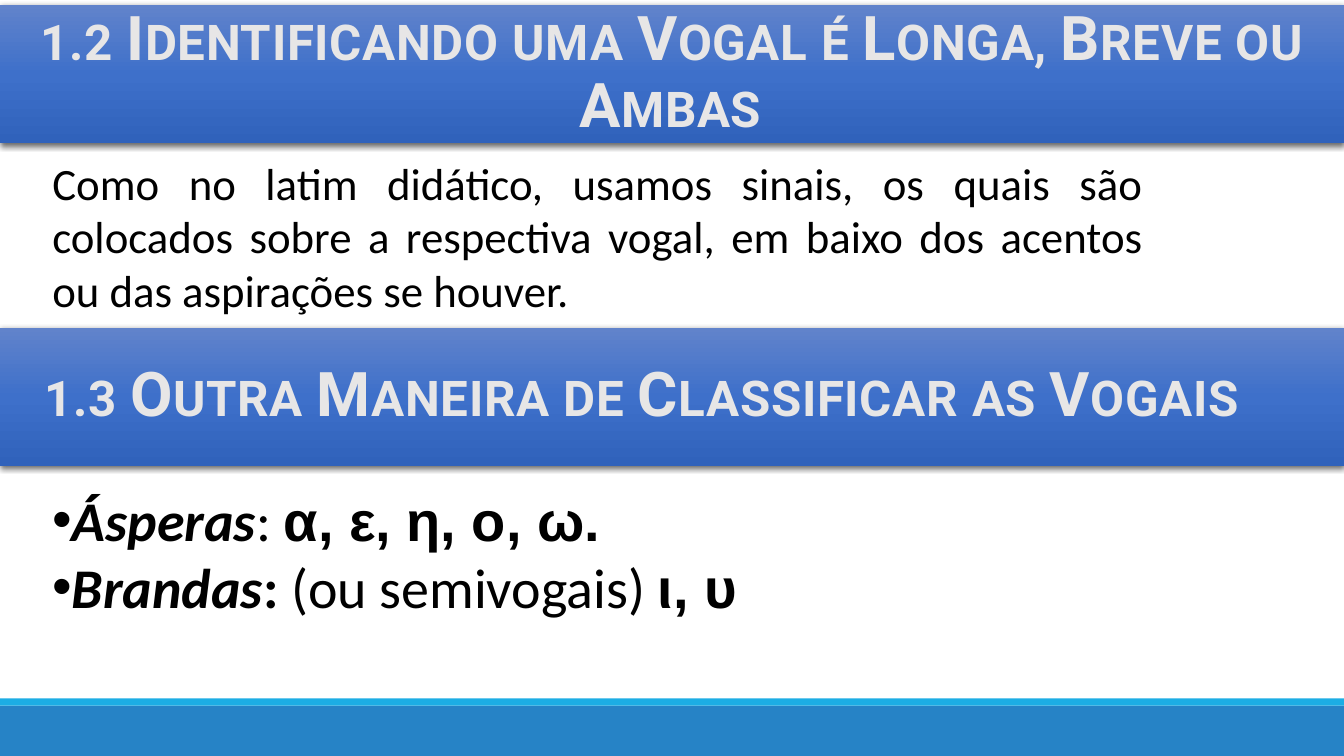
from dataclasses import dataclass

from lxml import etree
from pptx import Presentation
from pptx.dml.color import RGBColor
from pptx.enum.shapes import MSO_SHAPE
from pptx.enum.text import MSO_ANCHOR, MSO_AUTO_SIZE, PP_ALIGN
from pptx.oxml.ns import qn
from pptx.util import Inches, Pt

RECTANGLE = MSO_SHAPE.RECTANGLE
MIDDLE = MSO_ANCHOR.MIDDLE
NO_FIT = MSO_AUTO_SIZE.NONE
CENTER, JUSTIFY = PP_ALIGN.CENTER, PP_ALIGN.JUSTIFY
SLIDE_WIDTH, SLIDE_HEIGHT = 13.33, 7.5


@dataclass(frozen=True)
class Theme:
    heading_font: str = "Roboto"
    body_font: str = "Calibri"
    greek_font: str = "Arial"
    heading_size: int = 44
    body_size: int = 32
    vowel_size: int = 40
    heading_color: str = "E7E6E6"
    body_color: str = "000000"
    band_stops: tuple = ((0, "6183CB"), (50, "3E70CA"), (100, "3062BB"))
    shadow_color: str = "000000"
    footer_color: str = "2683C6"
    stripe_color: str = "1CADE4"


THEME = Theme()


def place(shape, box):
    shape.left, shape.top, shape.width, shape.height = map(Inches, box)


def set_font(font, name, size, color):
    font.name = name
    font.size = Pt(size)
    font.color.rgb = RGBColor.from_string(color)


def add_xml_color(parent, color):
    return etree.SubElement(parent, qn("a:srgbClr"), val=color)


def fill_band(band):
    band.fill.gradient()
    band.fill.gradient_angle = 270
    band.line.fill.background()
    stops = next(band._element.iter(qn("a:gsLst")))
    for old_stop in list(stops):
        stops.remove(old_stop)
    for position, color in THEME.band_stops:
        stop = etree.SubElement(stops, qn("a:gs"), pos=str(position * 1000))
        add_xml_color(stop, color)


def cast_shadow(band):
    band.shadow.inherit = False
    effects = next(band._element.iter(qn("a:effectLst")))
    shadow = etree.SubElement(
        effects, qn("a:outerShdw"), blurRad=str(Pt(4.5)), dist=str(Pt(1.5)),
        dir="5400000", algn="ctr", rotWithShape="0")
    color = add_xml_color(shadow, THEME.shadow_color)
    etree.SubElement(color, qn("a:alpha"), val="63000")


def format_heading(band, box, text, right_inset=0.1):
    place(band, box)
    fill_band(band)
    cast_shadow(band)
    frame = band.text_frame
    frame.text = text
    frame.word_wrap = True
    frame.auto_size = NO_FIT
    frame.vertical_anchor = MIDDLE
    frame.margin_right = Inches(right_inset)
    heading = frame.paragraphs[0]
    heading.alignment = CENTER
    heading.line_spacing = 0.9
    set_font(heading.font, THEME.heading_font, THEME.heading_size, THEME.heading_color)
    heading.font.bold = True
    letters = next(band._element.iter(qn("a:defRPr")))
    letters.set("cap", "small")
    letters.set("spc", "50")


def add_body_frame(slide, box):
    frame = slide.shapes.add_textbox(*map(Inches, box)).text_frame
    frame.word_wrap = True
    frame.vertical_anchor = MIDDLE
    return frame


def add_explanation(slide, box, text):
    explanation = add_body_frame(slide, box).paragraphs[0]
    explanation.text = text
    explanation.alignment = JUSTIFY
    set_font(explanation.font, THEME.body_font, THEME.body_size, THEME.body_color)


def add_vowel_classes(slide, box, classes):
    frame = add_body_frame(slide, box)
    for index, pieces in enumerate(classes):
        vowel_class = frame.add_paragraph() if index else frame.paragraphs[0]
        vowel_class.alignment = JUSTIFY
        properties = vowel_class._p.get_or_add_pPr()
        properties.set("marL", "0")
        properties.set("indent", "0")
        etree.SubElement(properties, qn("a:buFont"), typeface=THEME.greek_font)
        etree.SubElement(properties, qn("a:buChar"), char="•")
        for text, font_name, bold, italic in pieces:
            run = vowel_class.add_run()
            run.text = text
            set_font(run.font, font_name, THEME.vowel_size, THEME.body_color)
            run.font.bold = bold
            run.font.italic = italic


def add_footer(slide, box):
    left, top, width, height = box
    stripe_height = 0.07
    bars = (
        ((left, top + stripe_height, width, height - stripe_height), THEME.footer_color),
        ((left, top, width, stripe_height), THEME.stripe_color),
    )
    for bar_box, color in bars:
        bar = slide.shapes.add_shape(RECTANGLE, *map(Inches, bar_box))
        bar.shadow.inherit = False
        bar.fill.solid()
        bar.fill.fore_color.rgb = RGBColor.from_string(color)
        bar.line.fill.background()


def build_vowel_slide(presentation):
    slide = presentation.slides.add_slide(presentation.slide_layouts[5])
    add_footer(slide, (0, 6.93, SLIDE_WIDTH, 0.57))
    format_heading(
        slide.shapes.title, (0, 0.05, SLIDE_WIDTH, 1.37),
        "1.2 Identificando uma Vogal é Longa, Breve ou Ambas")
    add_explanation(
        slide, (0.42, 1.48, 11.02, 1.72),
        "Como no latim didático, usamos sinais, os quais são colocados sobre a "
        "respectiva vogal, em baixo dos acentos ou das aspirações se houver.")
    body, greek = THEME.body_font, THEME.greek_font
    add_vowel_classes(slide, (0.42, 4.76, 11.04, 1.45), (
        (("Ásperas", body, True, True), (": ", body, False, False),
         ("α, ε, η, ο, ω.", greek, True, False)),
        (("Brandas", body, True, True), (": ", body, True, False),
         ("(ou semivogais) ", body, False, False), ("ι, υ", greek, True, False)),
    ))
    section_box = (0, 3.25, SLIDE_WIDTH, 1.37)
    section_band = slide.shapes.add_shape(RECTANGLE, *map(Inches, section_box))
    format_heading(
        section_band, section_box,
        "1.3 Outra Maneira de Classificar as Vogais", right_inset=0.4)


def main():
    presentation = Presentation()
    presentation.slide_width = Inches(SLIDE_WIDTH)
    presentation.slide_height = Inches(SLIDE_HEIGHT)
    build_vowel_slide(presentation)
    presentation.save("out.pptx")


if __name__ == "__main__":
    main()
